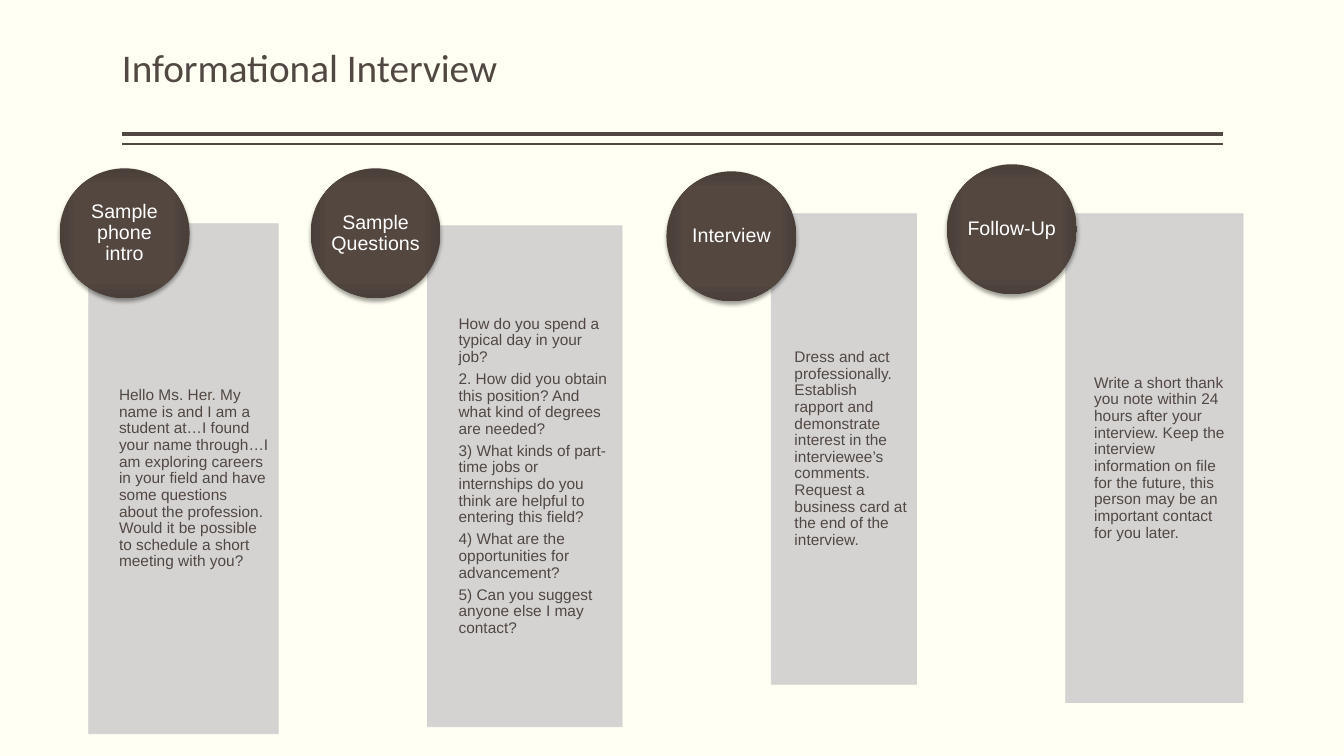
import pptx
import pptx.dml.color
import pptx.enum.shapes
import pptx.enum.text
import pptx.oxml
import pptx.oxml.ns
import pptx.util
from pptx.util import Inches

RGBColor = pptx.dml.color.RGBColor
Shapes = pptx.enum.shapes.MSO_SHAPE
Anchor = pptx.enum.text.MSO_ANCHOR
Align = pptx.enum.text.PP_ALIGN
qn = pptx.oxml.ns.qn

CREAM = RGBColor(0xFF, 0xFF, 0xF3)
BROWN = RGBColor(0x51, 0x48, 0x43)
GREY = RGBColor(0xD0, 0xCF, 0xCF)
WHITE = RGBColor(0xFF, 0xFF, 0xFF)
BLACK = RGBColor(0x00, 0x00, 0x00)
BADGE_STOPS = [
    (0, RGBColor(0x54, 0x47, 0x40)),
    (71, RGBColor(0x53, 0x47, 0x40)),
    (100, RGBColor(0x4A, 0x3F, 0x39)),
]

BADGE_SIZE = 1.29
BADGE_INSET = 0.19
PANEL_INDENT = 0.16

CARDS = [
    ("Sample phone intro", (0.59, 1.67), (0.88, 2.22, 1.88, 5.06), [
        "Hello Ms. Her. My name is and I am a student at…I found your name through…"
        "I am exploring careers in your field and have some questions about the "
        "profession. Would it be possible to schedule a short meeting with you?",
    ]),
    ("Sample Questions", (3.08, 1.67), (4.24, 2.24, 1.93, 4.97), [
        "How do you spend a typical day in your job?",
        "2. How did you obtain this position? And what kind of degrees are needed?",
        "3) What kinds of part-time jobs or internships do you think are helpful "
        "to entering this field?",
        "4) What are the opportunities for advancement?",
        "5) Can you suggest anyone else I may contact?",
    ]),
    ("Interview", (6.61, 1.7), (7.65, 2.12, 1.44, 4.67), [
        "Dress and act professionally. Establish rapport and demonstrate interest "
        "in the interviewee’s comments. Request a business card at the end of the "
        "interview.",
    ]),
    ("Follow-Up", (9.39, 1.63), (10.57, 2.12, 1.76, 4.85), [
        "Write a short thank you note within 24 hours after your interview. Keep "
        "the interview information on file for the future, this person may be an "
        "important contact for you later.",
    ]),
]


def write_text(box, lines, size, color, font="Arial", align=Align.LEFT,
               anchor=Anchor.MIDDLE, insets=(0, 0, 0, 0), after=0.35):
    frame = box.text_frame
    frame.word_wrap = True
    frame.auto_size = pptx.enum.text.MSO_AUTO_SIZE.NONE
    frame.vertical_anchor = anchor
    (frame.margin_left, frame.margin_top,
     frame.margin_right, frame.margin_bottom) = map(Inches, insets)
    for index, line in enumerate(lines):
        para = frame.paragraphs[0] if index == 0 else frame.add_paragraph()
        para.alignment = align
        para.line_spacing = 0.9
        para.space_before = pptx.util.Pt(0)
        para.space_after = pptx.util.Pt(size * after)
        span = para.add_run()
        span.text = line
        span.font.name = font
        span.font.size = pptx.util.Pt(size)
        span.font.color.rgb = color


def add_header(page, left, top, width, height):
    title = page.shapes.title
    title.left, title.top = Inches(left), Inches(top)
    title.width, title.height = Inches(width), Inches(height)
    write_text(title, ["Informational Interview"], 28, BROWN, font="Calibri",
               anchor=Anchor.BOTTOM, insets=(0, 0.05, 0, 0.05), after=0)
    for offset, weight in ((1.25, 3), (1.35, 1)):
        y = Inches(top + offset)
        rule = page.shapes.add_connector(
            pptx.enum.shapes.MSO_CONNECTOR.STRAIGHT,
            Inches(left + width), y, Inches(left), y)
        rule.line.color.rgb = BROWN
        rule.line.width = pptx.util.Pt(weight)
        rule._element.spPr.append(pptx.oxml.parse_xml(
            f'<a:effectLst {pptx.oxml.ns.nsdecls("a")}/>'))


def add_panel(page, lines, left, top, width, height):
    panel = page.shapes.add_shape(
        Shapes.RECTANGLE, *map(Inches, (left, top, width, height)))
    panel.shadow.inherit = False
    panel.fill.solid()
    panel.fill.fore_color.rgb = GREY
    panel.line.color.rgb = GREY
    panel.line.width = pptx.util.Pt(0.5)
    for color in panel._element.spPr.iter(qn("a:srgbClr")):
        color.append(pptx.oxml.parse_xml(
            f'<a:alpha {pptx.oxml.ns.nsdecls("a")} val="90000"/>'))
    indent = width * PANEL_INDENT
    box = page.shapes.add_textbox(
        *map(Inches, (left + indent, top, width - indent, height)))
    write_text(box, lines, 11, BROWN, insets=(0, 0.09, 0.09, 0.09))


def add_badge(page, label, left, top):
    badge = page.shapes.add_shape(
        Shapes.OVAL, *map(Inches, (left, top, BADGE_SIZE, BADGE_SIZE)))
    badge.line.fill.background()
    badge.shadow.inherit = False
    names = pptx.oxml.ns.nsdecls("a")
    stops = "".join(
        f'<a:gs pos="{place * 1000}"><a:srgbClr val="{color}"/></a:gs>'
        for place, color in BADGE_STOPS)
    properties = badge._element.spPr
    properties.find(qn("a:prstGeom")).addnext(pptx.oxml.parse_xml(
        f'<a:gradFill {names} rotWithShape="1"><a:gsLst>{stops}</a:gsLst>'
        '<a:path path="rect"><a:fillToRect l="50000" t="50000" r="50000" '
        'b="50000"/></a:path></a:gradFill>'))
    properties.find(qn("a:effectLst")).append(pptx.oxml.parse_xml(
        f'<a:outerShdw {names} blurRad="{pptx.util.Pt(3.1)}" '
        f'dist="{pptx.util.Pt(2)}" dir="5400000" rotWithShape="0">'
        f'<a:srgbClr val="{BLACK}"><a:alpha val="38000"/></a:srgbClr>'
        '</a:outerShdw>'))
    side = BADGE_SIZE - 2 * BADGE_INSET
    box = page.shapes.add_textbox(
        *map(Inches, (left + BADGE_INSET, top + BADGE_INSET, side, side)))
    write_text(box, [label], 14, WHITE, align=Align.CENTER)


def main():
    deck = pptx.Presentation()
    deck.slide_width, deck.slide_height = Inches(13.33), Inches(7.5)
    page = deck.slides.add_slide(deck.slide_layouts[5])
    page.background.fill.solid()
    page.background.fill.fore_color.rgb = CREAM
    add_header(page, 1.21, 0.08, 10.92, 0.87)
    for label, corner, panel, lines in CARDS:
        add_panel(page, lines, *panel)
        add_badge(page, label, *corner)
    deck.save("out.pptx")


if __name__ == "__main__":
    main()
